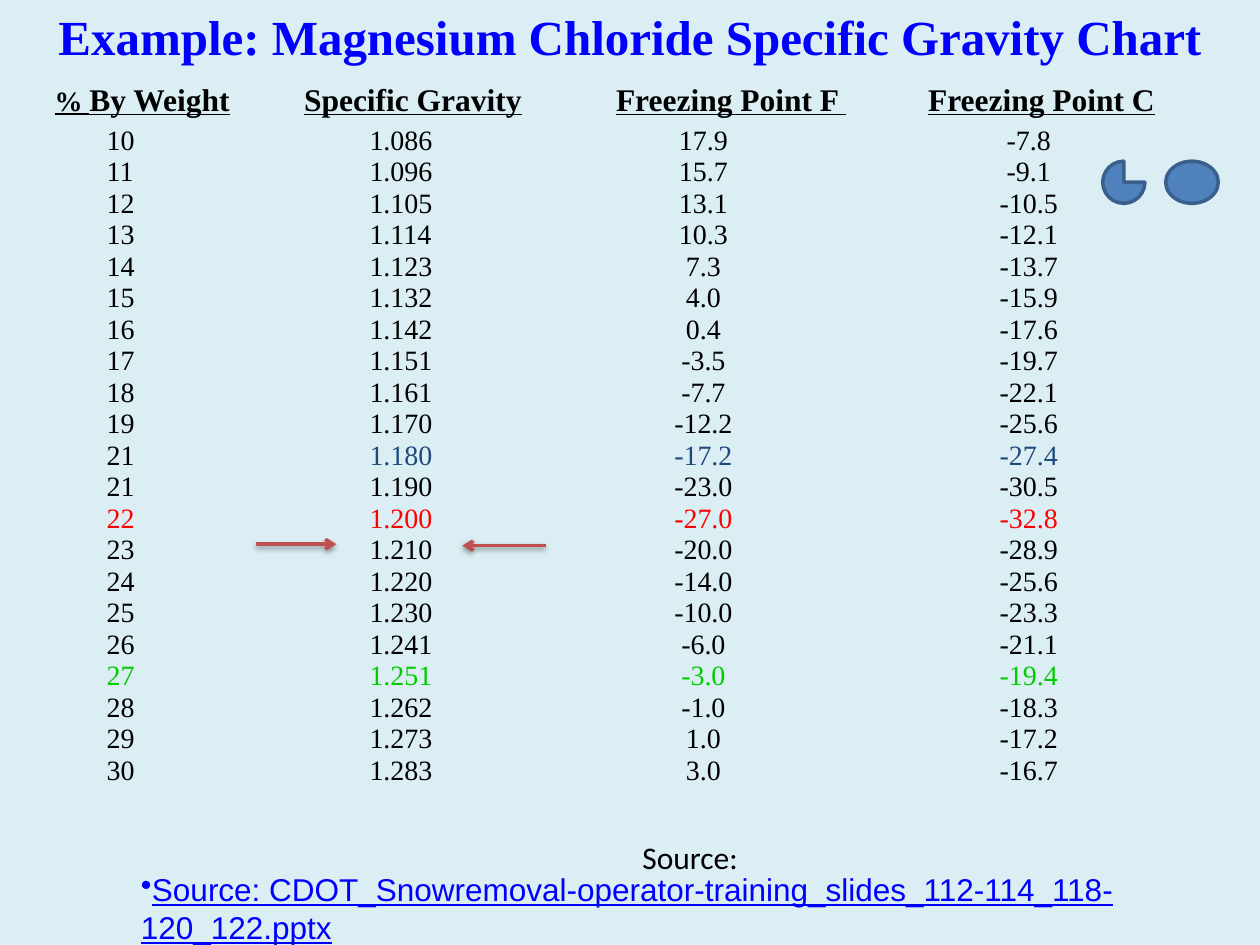
"""Build a slide with a magnesium chloride specific gravity chart."""
from lxml import etree
from pptx import Presentation
from pptx.dml.color import RGBColor
from pptx.enum.shapes import MSO_CONNECTOR, MSO_SHAPE
from pptx.enum.text import MSO_ANCHOR, PP_ALIGN
from pptx.oxml.ns import qn
from pptx.util import Cm, Pt

LEFT, CENTER = PP_ALIGN.LEFT, PP_ALIGN.CENTER
TOP, MIDDLE = MSO_ANCHOR.TOP, MSO_ANCHOR.MIDDLE
STRAIGHT = MSO_CONNECTOR.STRAIGHT
PIE, OVAL = MSO_SHAPE.PIE, MSO_SHAPE.OVAL
SERIF = "Times New Roman"
BLACK, BLUE, NAVY, RED, GREEN = "000000", "0000FF", "1F497D", "FF0000", "00CC00"


def color(value):
    return RGBColor.from_string(value)


def add_frame(left, top, width, height, anchor=TOP):
    frame = slide.shapes.add_textbox(Cm(left), Cm(top), Cm(width), Cm(height)).text_frame
    frame.word_wrap = True
    frame.vertical_anchor = anchor
    return frame


def add_run(paragraph, text, size, face=SERIF, ink=BLACK, bold=False, underline=False):
    run = paragraph.add_run()
    run.text = text
    run.font.size = Pt(size)
    run.font.name = face
    run.font.color.rgb = color(ink)
    run.font.bold = bold
    run.font.underline = underline


prs = Presentation()
prs.slide_width, prs.slide_height = Cm(25.4), Cm(19.05)
slide = prs.slides.add_slide(prs.slide_layouts[6])
slide.background.fill.solid()
slide.background.fill.fore_color.rgb = color("DBEEF4")

title = add_frame(0, 0, 25.4, 1.27).paragraphs[0]
title.alignment = CENTER
add_run(title, "Example: Magnesium Chloride Specific Gravity Chart", 28, ink=BLUE, bold=True)

headings = add_frame(0.85, 1.48, 23.7, 1.78).paragraphs[0]
tab_stops = etree.SubElement(headings._p.get_or_add_pPr(), qn("a:tabLst"))
for number in range(3):
    etree.SubElement(tab_stops, qn("a:tab"), pos=str(Cm(5.03 + 6.29 * number)), algn="l")
add_run(headings, "% ", 16, bold=True, underline=True)
add_run(headings, "By Weight\tSpecific Gravity\tFreezing Point F \tFreezing Point C", 18,
        bold=True, underline=True)

columns = [
    (1.9, LEFT, "10 11 12 13 14 15 16 17 18 19 21 21 22 23 24 25 26 27 28 29 30"),
    (7.2, LEFT, "1.086 1.096 1.105 1.114 1.123 1.132 1.142 1.151 1.161 1.170 1.180 "
                "1.190 1.200 1.210 1.220 1.230 1.241 1.251 1.262 1.273 1.283"),
    (12.91, CENTER, "17.9 15.7 13.1 10.3 7.3 4.0 0.4 -3.5 -7.7 -12.2 -17.2 "
                    "-23.0 -27.0 -20.0 -14.0 -10.0 -6.0 -3.0 -1.0 1.0 3.0"),
    (19.47, CENTER, "-7.8 -9.1 -10.5 -12.1 -13.7 -15.9 -17.6 -19.7 -22.1 -25.6 -27.4 "
                    "-30.5 -32.8 -28.9 -25.6 -23.3 -21.1 -19.4 -18.3 -17.2 -16.7"),
]
row_inks = {10: NAVY, 12: RED, 17: GREEN}
for left, alignment, values in columns:
    column = add_frame(left, 1.9, 2.54, 14.86)
    column.margin_top = Cm(0.86)
    for row, value in enumerate(values.split()):
        entry = column.add_paragraph() if row else column.paragraphs[0]
        entry.alignment = alignment
        entry.line_spacing = 0.5
        entry.space_before = Pt(8.4)
        ink = BLACK if value == "21" else row_inks.get(row, BLACK)
        add_run(entry, value, 16, ink=ink)

source_label = add_frame(12.7, 16.76, 10.59, 1.02).paragraphs[0]
add_run(source_label, "Source:", 18, "Calibri")

source_file = add_frame(2.59, 17.4, 22.38, 1.8, MIDDLE).paragraphs[0]
etree.SubElement(source_file._p.get_or_add_pPr(), qn("a:buChar"), char="•")
add_run(source_file,
        "Source: CDOT_Snowremoval-operator-training_slides_112-114_118-120_122.pptx",
        18, "Arial", BLUE, underline=True)

for start, end, height in [(11, 9.32, 11), (5.16, 6.78, 10.97)]:
    arrow = slide.shapes.add_connector(STRAIGHT, Cm(start), Cm(height), Cm(end), Cm(height))
    arrow.line.color.rgb = color("C0504D")
    arrow.line.width = Pt(2)
    etree.SubElement(arrow.line._get_or_add_ln(), qn("a:tailEnd"), type="arrow")
    effects = etree.SubElement(arrow._element.spPr, qn("a:effectLst"))
    shadow = etree.SubElement(effects, qn("a:outerShdw"), blurRad=str(Pt(3.1)),
                              dist=str(Pt(1.6)), dir="5400000", rotWithShape="0")
    shade = etree.SubElement(shadow, qn("a:srgbClr"), val=BLACK)
    etree.SubElement(shade, qn("a:alpha"), val="38000")

for kind, left, width in [(PIE, 22.23, 0.85), (OVAL, 23.5, 1.06)]:
    marker = slide.shapes.add_shape(kind, Cm(left), Cm(3.25), Cm(width), Cm(0.85))
    marker.shadow.inherit = False
    marker.fill.solid()
    marker.fill.fore_color.rgb = color("4F81BD")
    marker.line.color.rgb = color("3A5F8C")
    marker.line.width = Pt(2)

prs.save("out.pptx")
